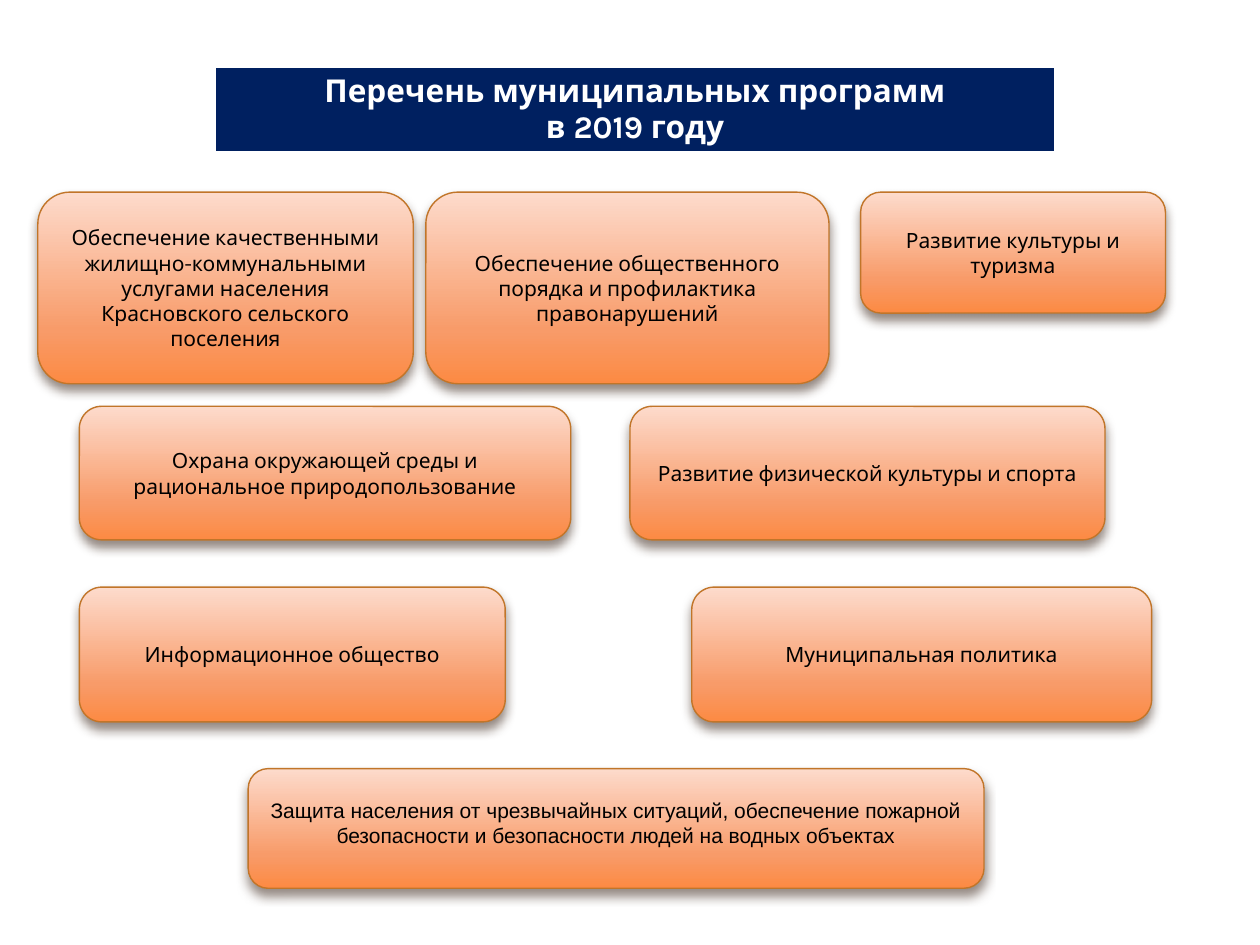
from dataclasses import dataclass

from lxml import etree
from pptx import Presentation
from pptx.dml.color import RGBColor
from pptx.enum.shapes import MSO_SHAPE
from pptx.enum.text import MSO_ANCHOR, PP_ALIGN
from pptx.oxml.ns import qn
from pptx.util import Inches, Pt

ROUNDED = MSO_SHAPE.ROUNDED_RECTANGLE
MIDDLE = MSO_ANCHOR.MIDDLE
CENTER = PP_ALIGN.CENTER

NAVY = RGBColor(0x00, 0x20, 0x60)
WHITE = RGBColor(0xFF, 0xFF, 0xFF)
BLACK = RGBColor(0x00, 0x00, 0x00)
OUTLINE = RGBColor(0xC1, 0x75, 0x29)
SHADOW = RGBColor(0x4E, 0x3B, 0x30)
# Gradient stops: percent of the way down, colour
GRADIENT = (
    (0, RGBColor(0xFD, 0xDB, 0xCC)),
    (72, RGBColor(0xF8, 0x9B, 0x69)),
    (100, RGBColor(0xFC, 0x8A, 0x43)),
)

# The slide is a grid of 100 columns by 75 rows
COLUMNS, ROWS = 100, 75
SLIDE_WIDTH, SLIDE_HEIGHT = Inches(10), Inches(7.5)
COLUMN = SLIDE_WIDTH / COLUMNS
ROW = SLIDE_HEIGHT / ROWS


@dataclass(frozen=True)
class Program:
    column: float
    width: float
    height: float
    title: str
    font: str = "Karla"
    raised: float = 0  # rows of extra space under the text


# Each band: its top row and the programs that stand in it
BANDS = (
    (15.25, (
        Program(3, 29.8, 15.2, "Обеспечение качественными жилищно-коммунальными "
                "услугами населения Красновского сельского поселения"),
        Program(33.8, 32, 15.2, "Обеспечение общественного порядка и "
                "профилактика правонарушений"),
        Program(68.3, 24.2, 9.6, "Развитие культуры и туризма"),
    )),
    (32.25, (
        Program(6.3, 39, 10.6, "Охрана окружающей среды и рациональное "
                "природопользование"),
        Program(50, 37.7, 10.6, "Развитие физической культуры и спорта"),
    )),
    (46.6, (
        Program(6.3, 33.8, 10.7, "Информационное общество"),
        Program(54.9, 36.5, 10.7, "Муниципальная политика"),
    )),
    (61, (
        Program(19.7, 58.4, 9.5, "Защита населения от чрезвычайных ситуаций, "
                "обеспечение пожарной безопасности и безопасности людей "
                "на водных объектах", font="Arial", raised=0.9),
    )),
)


def grid_box(column: float, row: float, width: float, height: float) -> tuple:
    return (round(column * COLUMN), round(row * ROW),
            round(width * COLUMN), round(height * ROW))


def write_text(frame, text: str, *, size: float, color: RGBColor,
               font: str = "Karla", bold: bool = False) -> None:
    """Fill a text frame with one centred paragraph per line."""
    frame.word_wrap = True
    for index, line in enumerate(text.split("\n")):
        paragraph = frame.add_paragraph() if index else frame.paragraphs[0]
        paragraph.alignment = CENTER
        run = paragraph.add_run()
        run.text = line
        run.font.name = font
        run.font.size = Pt(size)
        run.font.bold = bold
        run.font.color.rgb = color


def add_color(parent, color: RGBColor):
    return etree.SubElement(parent, qn("a:srgbClr"), val=str(color))


def fill_gradient(shape) -> None:
    shape.fill.gradient()
    shape.fill.gradient_angle = 270
    stops = shape._element.spPr.find(".//" + qn("a:gsLst"))
    for stop in list(stops):
        stops.remove(stop)
    for percent, color in GRADIENT:
        add_color(etree.SubElement(stops, qn("a:gs"), pos=str(percent * 1000)), color)


def cast_shadow(shape) -> None:
    shape.shadow.inherit = False
    effects = shape._element.spPr.find(qn("a:effectLst"))
    shadow = etree.SubElement(
        effects, qn("a:outerShdw"), blurRad=str(Pt(6)), dist=str(Pt(4)),
        dir="5400000", rotWithShape="0")
    etree.SubElement(add_color(shadow, SHADOW), qn("a:alpha"), val="60000")


def draw_program(slide, top: float, program: Program) -> None:
    card = slide.shapes.add_shape(
        ROUNDED, *grid_box(program.column, top, program.width, program.height))
    fill_gradient(card)
    card.line.color.rgb = OUTLINE
    card.line.width = Pt(0.79)
    cast_shadow(card)
    frame = card.text_frame
    frame.vertical_anchor = MIDDLE
    frame.margin_bottom = round(frame.margin_bottom + program.raised * ROW)
    write_text(frame, program.title, size=12, color=BLACK, font=program.font)


def draw_heading(slide, text: str) -> None:
    table = slide.shapes.add_table(1, 1, *grid_box(17.1, 5.3, 66.6, 6.7)).table
    cell = table.cell(0, 0)
    cell.fill.solid()
    cell.fill.fore_color.rgb = NAVY
    write_text(cell.text_frame, text, size=18, color=WHITE, bold=True)
    # White borders, heavier below; they come before the fill
    properties = cell._tc.get_or_add_tcPr()
    for index, (side, width) in enumerate(
            (("lnL", 1), ("lnR", 1), ("lnT", 1), ("lnB", 3))):
        border = etree.Element(qn(f"a:{side}"), w=str(Pt(width)))
        add_color(etree.SubElement(border, qn("a:solidFill")), WHITE)
        properties.insert(index, border)


def main() -> None:
    presentation = Presentation()
    presentation.slide_width = SLIDE_WIDTH
    presentation.slide_height = SLIDE_HEIGHT
    slide = presentation.slides.add_slide(presentation.slide_layouts[6])

    draw_heading(slide, "Перечень муниципальных программ\nв 2019 году")
    for top, programs in BANDS:
        for program in programs:
            draw_program(slide, top, program)

    presentation.save("out.pptx")


if __name__ == "__main__":
    main()
